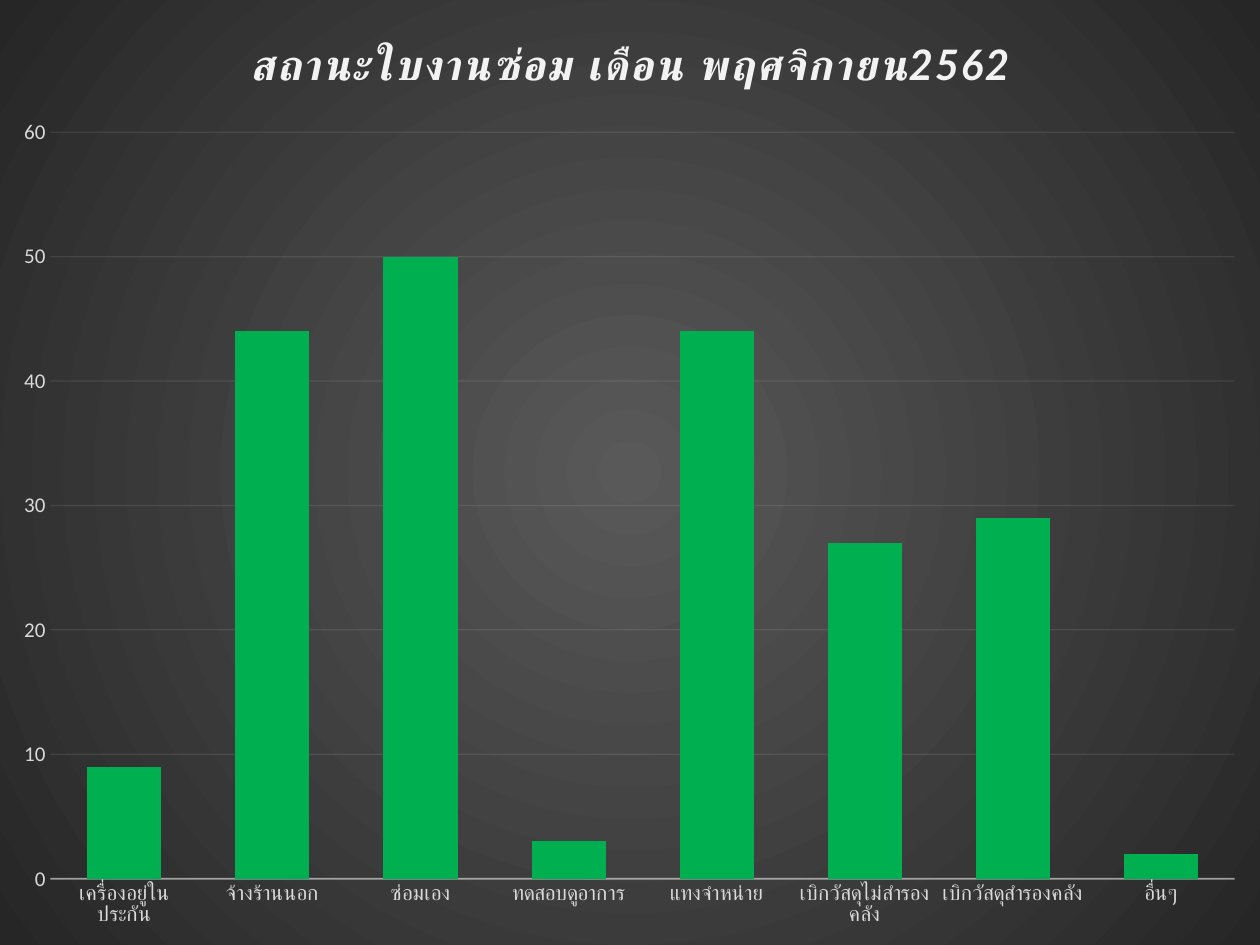
from dataclasses import dataclass

from lxml import etree
from pptx import Presentation
from pptx.chart.data import CategoryChartData
from pptx.dml.color import RGBColor
from pptx.enum.chart import XL_CHART_TYPE, XL_TICK_MARK
from pptx.oxml import parse_xml
from pptx.oxml.ns import nsdecls, qn
from pptx.util import Inches, Pt

COLUMN_CLUSTERED = XL_CHART_TYPE.COLUMN_CLUSTERED
NO_TICK = XL_TICK_MARK.NONE


@dataclass(frozen=True)
class Theme:
    font: str = "Calibri"
    title_font: str = "Lato"
    title_size: int = 24
    label_size: int = 12
    title_color: str = "F2F2F2"
    label_color: str = "D9D9D9"
    line_color: str = "F2F2F2"
    bar_color: str = "00B050"
    center_color: str = "595959"
    edge_color: str = "262626"


THEME = Theme()
TITLE = "สถานะใบงานซ่อม เดือน พฤศจิกายน2562"
REPAIR_JOBS = {
    "เครื่องอยู่ในประกัน": 9,
    "จ้างร้านนอก": 44,
    "ซ่อมเอง": 50,
    "ทดสอบดูอาการ": 3,
    "แทงจำหน่าย": 44,
    "เบิกวัสดุไม่สำรองคลัง": 27,
    "เบิกวัสดุสำรองคลัง": 29,
    "อื่นๆ": 2,
}
PLOT_SHARES = {"x": 0.04, "y": 0.14, "w": 0.94, "h": 0.79}


def style_font(font, name, size, color):
    font.name = name
    font.size = Pt(size)
    font.color.rgb = RGBColor.from_string(color)


def style_line(line, width):
    line.width = Pt(width)
    line.color.rgb = RGBColor.from_string(THEME.line_color)


def set_opacity(chart, line_query, percent):
    """Make the line colours found by the query partly transparent."""
    for color in chart.element.xpath(f"{line_query}//a:ln//a:srgbClr"):
        etree.SubElement(color, qn("a:alpha"), val=str(percent * 1000))


def fill_background(chart):
    """Fill the chart area with a gradient running out from its centre."""
    properties = parse_xml(
        f'<c:spPr {nsdecls("c", "a")}><a:gradFill><a:gsLst>'
        f'<a:gs pos="0"><a:srgbClr val="{THEME.center_color}"/></a:gs>'
        f'<a:gs pos="100000"><a:srgbClr val="{THEME.edge_color}"/></a:gs>'
        '</a:gsLst><a:path path="circle">'
        '<a:fillToRect l="50000" t="50000" r="50000" b="50000"/>'
        '</a:path></a:gradFill><a:ln><a:noFill/></a:ln></c:spPr>'
    )
    chart.element.find(qn("c:chart")).addnext(properties)


def place_plot(chart):
    """Fix the inner plot area as shares of the chart."""
    plot_area = chart.element.find(".//" + qn("c:plotArea"))
    for layout in plot_area.findall(qn("c:layout")):
        plot_area.remove(layout)
    shares = "".join(f'<c:{key} val="{share}"/>' for key, share in PLOT_SHARES.items())
    plot_area.insert(0, parse_xml(
        f'<c:layout {nsdecls("c")}><c:manualLayout><c:layoutTarget val="inner"/>'
        f'<c:xMode val="edge"/><c:yMode val="edge"/>{shares}'
        '</c:manualLayout></c:layout>'
    ))


def add_title(chart):
    chart.has_title = True
    chart.chart_title.include_in_layout = False
    paragraph = chart.chart_title.text_frame.paragraphs[0]
    run = paragraph.add_run()
    run.text = TITLE
    style_font(run.font, THEME.title_font, THEME.title_size, THEME.title_color)
    run.font.bold = True
    run.font.italic = True
    run.font._element.set("spc", "100")


def style_axes(chart):
    for axis in (chart.category_axis, chart.value_axis):
        axis.major_tick_mark = NO_TICK
        axis.minor_tick_mark = NO_TICK
        style_font(axis.tick_labels.font, THEME.font, THEME.label_size, THEME.label_color)
    style_line(chart.category_axis.format.line, 1)
    value_axis = chart.value_axis
    value_axis.minimum_scale, value_axis.maximum_scale = 0, 60
    value_axis.major_unit = 10
    value_axis.format.line.fill.background()
    value_axis.has_major_gridlines = True
    style_line(value_axis.major_gridlines.format.line, 0.75)
    set_opacity(chart, ".//c:catAx/c:spPr", 54)
    set_opacity(chart, ".//c:majorGridlines", 10)


def add_status_chart(slide, left, top, width, height):
    data = CategoryChartData()
    data.categories = list(REPAIR_JOBS)
    data.add_series("Series 1", list(REPAIR_JOBS.values()))
    chart = slide.shapes.add_chart(
        COLUMN_CLUSTERED, left, top, width, height, data
    ).chart
    chart.has_legend = False
    chart.font.name = THEME.font
    chart.font.size = Pt(10)
    plot = chart.plots[0]
    plot.vary_by_categories = False
    plot.gap_width = 100
    plot.overlap = -24
    fill = plot.series[0].format.fill
    fill.solid()
    fill.fore_color.rgb = RGBColor.from_string(THEME.bar_color)
    add_title(chart)
    style_axes(chart)
    place_plot(chart)
    fill_background(chart)


def main():
    presentation = Presentation()
    presentation.slide_width = Inches(10)
    presentation.slide_height = Inches(7.5)
    slide = presentation.slides.add_slide(presentation.slide_layouts[6])
    add_status_chart(slide, 0, 0, presentation.slide_width, presentation.slide_height)
    presentation.save("out.pptx")


if __name__ == "__main__":
    main()
